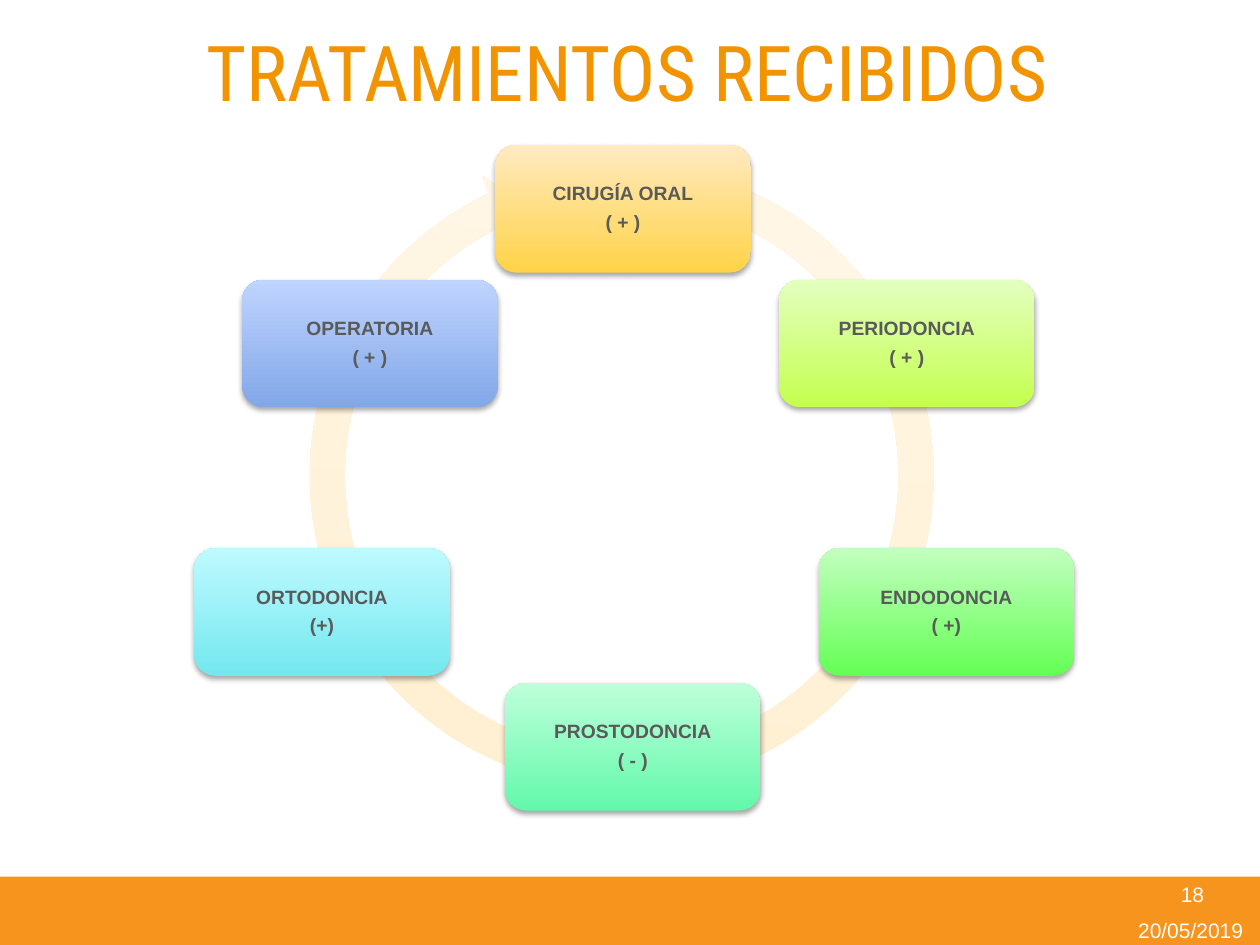
from pptx import Presentation
from pptx.util import Pt
from pptx.dml.color import RGBColor
from pptx.enum.shapes import MSO_SHAPE as Geo
from pptx.enum.text import MSO_ANCHOR as Anchor, PP_ALIGN as Align
from pptx.oxml import parse_xml
from pptx.oxml.ns import nsdecls

SHADOW = (f'<a:outerShdw {nsdecls("a")} blurRad="40000" dist="23000" '
          'dir="5400000" rotWithShape="0"><a:srgbClr val="000000">'
          '<a:alpha val="35000"/></a:srgbClr></a:outerShdw>')
CARD_W, CARD_H = 146, 73

# Name, sign, left, top, bottom colour, top colour
CARDS = [
    ("CIRUGÍA ORAL", "( + )", 283, 82.8, "FFD347", "FFEAC1"),
    ("PERIODONCIA", "( + )", 445.2, 159.8, "C4FF4E", "E3FFBF"),
    ("ENDODONCIA", "( +)", 467.8, 313.2, "64FF55", "C2FFBE"),
    ("PROSTODONCIA", "( - )", 288.6, 390.2, "62F9AB", "BEFFD9"),
    ("ORTODONCIA", "(+)", 111, 313.2, "73E8EF", "BEFAFF"),
    ("OPERATORIA", "( + )", 138.4, 159.8, "82A7E7", "BFD4FF"),
]


def color(code):
    return RGBColor.from_string(code)


def style(para, size, code, face="Arial", bold=False):
    para.alignment = Align.CENTER
    for run in para.runs:
        font = run.font
        font.name, font.size, font.bold = face, Pt(size), bold
        font.color.rgb = color(code)


def add_form(slide, geo, left, top, width, height):
    form = slide.shapes.add_shape(geo, Pt(left), Pt(top), Pt(width), Pt(height))
    form.shadow.inherit = False
    form.line.fill.background()
    return form


def fade(form, low, high):
    """Vertical gradient from the bottom up."""
    form.fill.gradient()
    form.fill.gradient_angle = 90
    for stop, code, place in zip(form.fill.gradient_stops, (low, high), (0, 1)):
        stop.color.rgb = color(code)
        stop.position = place


def add_label(slide, text, left, top, width, height, size, code,
              face="Arial", anchor=Anchor.MIDDLE):
    box = slide.shapes.add_textbox(Pt(left), Pt(top), Pt(width), Pt(height))
    frame = box.text_frame
    frame.word_wrap = True
    frame.vertical_anchor = anchor
    frame.text = text
    style(frame.paragraphs[0], size, code, face)
    return frame.paragraphs[0]


def add_ring(slide):
    ring = add_form(slide, Geo.CIRCULAR_ARROW, 166.3, 82.8, 378, 378)
    ring.rotation = 7.8
    for i, value in enumerate((0.053, 3.126, 142.007, 171.431, 0.055)):
        ring.adjustments[i] = value
    fade(ring, "FFEFCF", "FFF7E9")


def add_card(slide, name, sign, left, top, low, high):
    card = add_form(slide, Geo.ROUNDED_RECTANGLE, left, top, CARD_W, CARD_H)
    fade(card, low, high)
    card.element.spPr.find("{*}effectLst").append(parse_xml(SHADOW))
    frame = card.text_frame
    frame.word_wrap = True
    frame.vertical_anchor = Anchor.MIDDLE
    frame.margin_left = frame.margin_right = Pt(3.6)
    frame.margin_top = frame.margin_bottom = Pt(3.6)
    frame.text = f"{name}\n{sign}"
    for para in frame.paragraphs:
        para.line_spacing = 0.9
        para.space_after = Pt(4.4)
        style(para, 11, "5A5A5A", bold=True)
    return frame


def main():
    deck = Presentation()
    deck.slide_width, deck.slide_height = Pt(720), Pt(540)
    slide = deck.slides.add_slide(deck.slide_layouts[6])

    # Footer band with number and date
    band = add_form(slide, Geo.RECTANGLE, 0, 501, 720, 39)
    band.fill.solid()
    band.fill.fore_color.rgb = color("F7941D")
    add_label(slide, "20/05/2019", 642.2, 524.2, 76.4, 15.2, 12, "FFFFFF")
    add_label(slide, "18", 643.6, 500.4, 75.6, 21.6, 12, "FFFFFF")

    # Cycle of treatments
    add_ring(slide)
    for entry in CARDS:
        frame = add_card(slide, *entry)
        if entry[0] == "PERIODONCIA":
            # This sign sits slightly left of centre
            props = frame.paragraphs[1].runs[0].font  # keeps run styling
            props.bold = True
            frame.paragraphs[1].element.get_or_add_pPr().set(
                "marR", str(Pt(6.8))) if hasattr(
                frame.paragraphs[1], "element") else None

    # Title
    title = add_label(slide, "TRATAMIENTOS RECIBIDOS", 48.2, 9.4, 620.6, 77,
                      44, "F29400", "Roboto Condensed", Anchor.TOP)
    title.line_spacing = Pt(54)

    deck.save("out.pptx")


if __name__ == "__main__":
    main()
